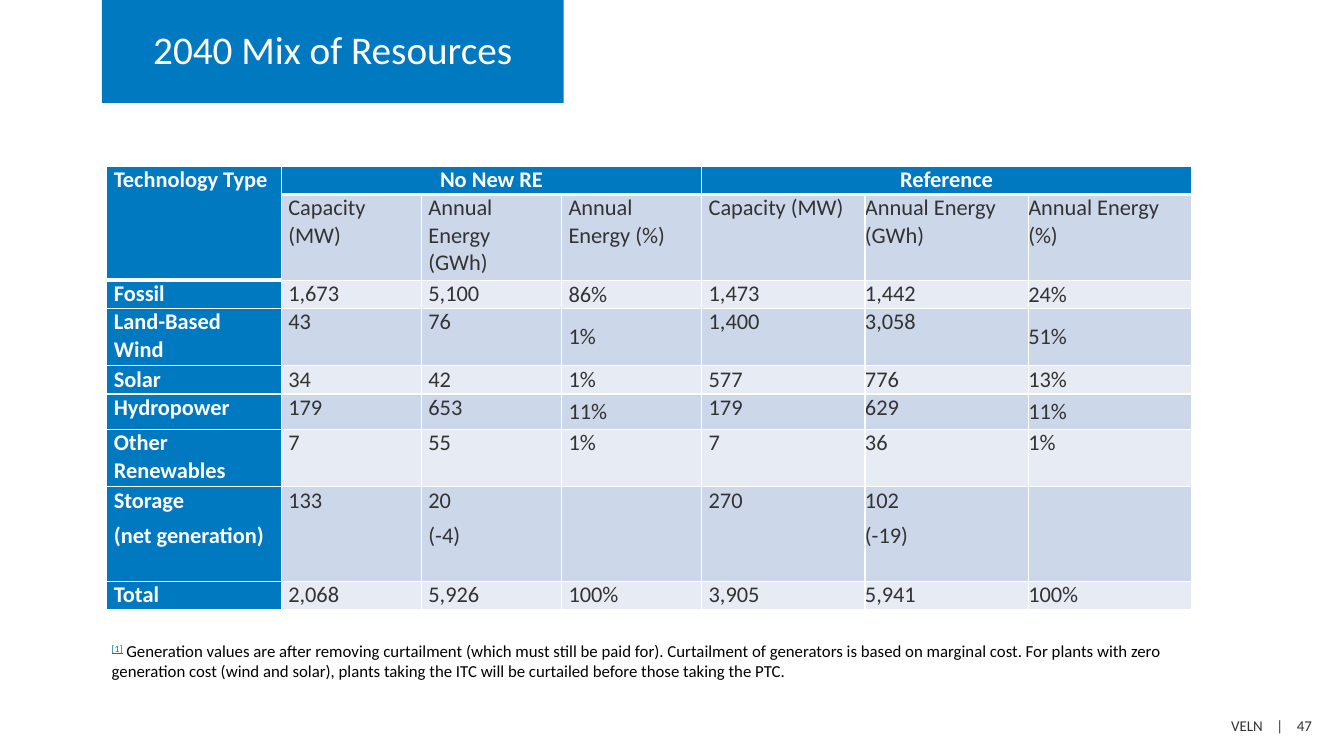
from pptx import Presentation
from pptx.dml.color import RGBColor
from pptx.enum.shapes import MSO_SHAPE as Shape
from pptx.enum.text import MSO_ANCHOR as Anchor, PP_ALIGN as Align
from pptx.oxml import parse_xml
from pptx.oxml.ns import nsdecls
from pptx.util import Inches, Pt

BLUE = RGBColor(0x00, 0x79, 0xC1)
WHITE = RGBColor(0xFF, 0xFF, 0xFF)
BLACK = RGBColor(0x00, 0x00, 0x00)
GRAY = RGBColor(0x33, 0x33, 0x33)
DARK = RGBColor(0xCC, 0xD7, 0xE9)
LIGHT = RGBColor(0xE7, 0xEC, 0xF4)


def add_run(para, text, size, color, bold=False):
    run = para.add_run()
    run.text = text
    font = run.font
    font.name, font.size, font.bold = "Calibri", Pt(size), bold
    font.color.rgb = color
    return run


def set_edges(cell, base):
    for side in "LRTB":
        width = Pt(base) if side == "B" else Pt(1)
        cell._tc.get_or_add_tcPr().append(parse_xml(
            f'<a:ln{side} {nsdecls("a")} w="{width}"><a:solidFill>'
            f'<a:srgbClr val="{WHITE}"/></a:solidFill></a:ln{side}>'))


deck = Presentation()
deck.slide_width, deck.slide_height = Inches(13.33), Inches(7.5)
slide = deck.slides.add_slide(deck.slide_layouts[6])

# Footer, with the bar spaced out by its letter spacing
foot = slide.shapes.add_textbox(Inches(9.79), Inches(7.06), Inches(3.32), Inches(0.28))
foot.text_frame.word_wrap = True
para = foot.text_frame.paragraphs[0]
para.alignment = Align.RIGHT
add_run(para, "VELN", 10.7, GRAY)
bar = add_run(para, " |", 10.7, GRAY)
bar.font._element.set("spc", "725")
add_run(para, " 47", 10.7, GRAY)

# Title
title = slide.shapes.add_shape(Shape.RECTANGLE, Inches(1.01), 0, Inches(4.58), Inches(1.02))
title.shadow.inherit = False
title.fill.solid()
title.fill.fore_color.rgb = BLUE
title.line.fill.background()
title.text_frame.word_wrap = True
title.text_frame.vertical_anchor = Anchor.MIDDLE
para = title.text_frame.paragraphs[0]
para.alignment = Align.CENTER
para.line_spacing = 0.9
add_run(para, "2040 Mix of Resources", 28, WHITE)

# Table data
rows = [
    ["Technology Type", "No New RE", "", "", "Reference", "", ""],
    ["", "Capacity (MW)", "Annual Energy (GWh)", "Annual Energy (%)",
     "Capacity (MW)", "Annual Energy (GWh)", "Annual Energy (%)"],
    ["Fossil", "1,673", "5,100", "86%", "1,473", "1,442", "24%"],
    ["Land-Based Wind", "43", "76", "1%", "1,400", "3,058", "51%"],
    ["Solar", "34", "42", "1%", "577", "776", "13%"],
    ["Hydropower", "179", "653", "11%", "179", "629", "11%"],
    ["Other Renewables", "7", "55", "1%", "7", "36", "1%"],
    ["Storage\n(net generation)", "133", "20\n(-4)", "", "270", "102\n(-19)", ""],
    ["Total", "2,068", "5,926", "100%", "3,905", "5,941", "100%"],
]
widths = [1.73] + [1.39] * 3 + [1.62] * 3
heights = [0.28, 0.85, 0.28, 0.57, 0.28, 0.35, 0.57, 0.94, 0.28]

# Table frame
table = slide.shapes.add_table(len(rows), len(widths), Inches(1.06), Inches(1.65),
                               Inches(10.78), Inches(4.43)).table
table.first_row = table.horz_banding = False
for col, width in zip(table.columns, widths):
    col.width = Inches(width)
for row, height in zip(table.rows, heights):
    row.height = Inches(height)
table.cell(0, 0).merge(table.cell(1, 0))
table.cell(0, 1).merge(table.cell(0, 3))
table.cell(0, 4).merge(table.cell(0, 6))

# Table cells
for r, row in enumerate(rows):
    for c, text in enumerate(row):
        cell = table.cell(r, c)
        head = r == 0 or c == 0
        set_edges(cell, 3 if r == 0 or (r, c) == (1, 0) else 1)
        cell.fill.solid()
        cell.fill.fore_color.rgb = BLUE if head else DARK if r % 2 else LIGHT
        cell.margin_left = cell.margin_right = Inches(0 if c > 4 and r else 0.07)
        cell.margin_top = cell.margin_bottom = 0
        if c in (3, 6) and 2 <= r <= 5:
            cell.vertical_anchor = Anchor.MIDDLE
        if not text:
            continue
        for i, line in enumerate(text.split("\n")):
            frame = cell.text_frame
            para = frame.add_paragraph() if i else frame.paragraphs[0]
            para.space_before = para.space_after = Pt(3)
            if r == 0 and c:
                para.alignment = Align.CENTER
            add_run(para, line, 16, WHITE if head else GRAY, head)

# Footnote
note = slide.shapes.add_textbox(Inches(1.01), Inches(6.31), Inches(10.78), Inches(0.5))
note.text_frame.word_wrap = True
note.text_frame.vertical_anchor = Anchor.MIDDLE
para = note.text_frame.paragraphs[0]
mark = add_run(para, "[1]", 12, BLUE)
mark.font.underline = True
mark.font._element.set("baseline", "30000")
add_run(para, " Generation values are after removing curtailment (which must still be "
        "paid for). Curtailment of generators is based on marginal cost. For plants with "
        "zero generation cost (wind and solar), plants taking the ITC will be curtailed "
        "before those taking the PTC.", 12, BLACK)

deck.save("out.pptx")
